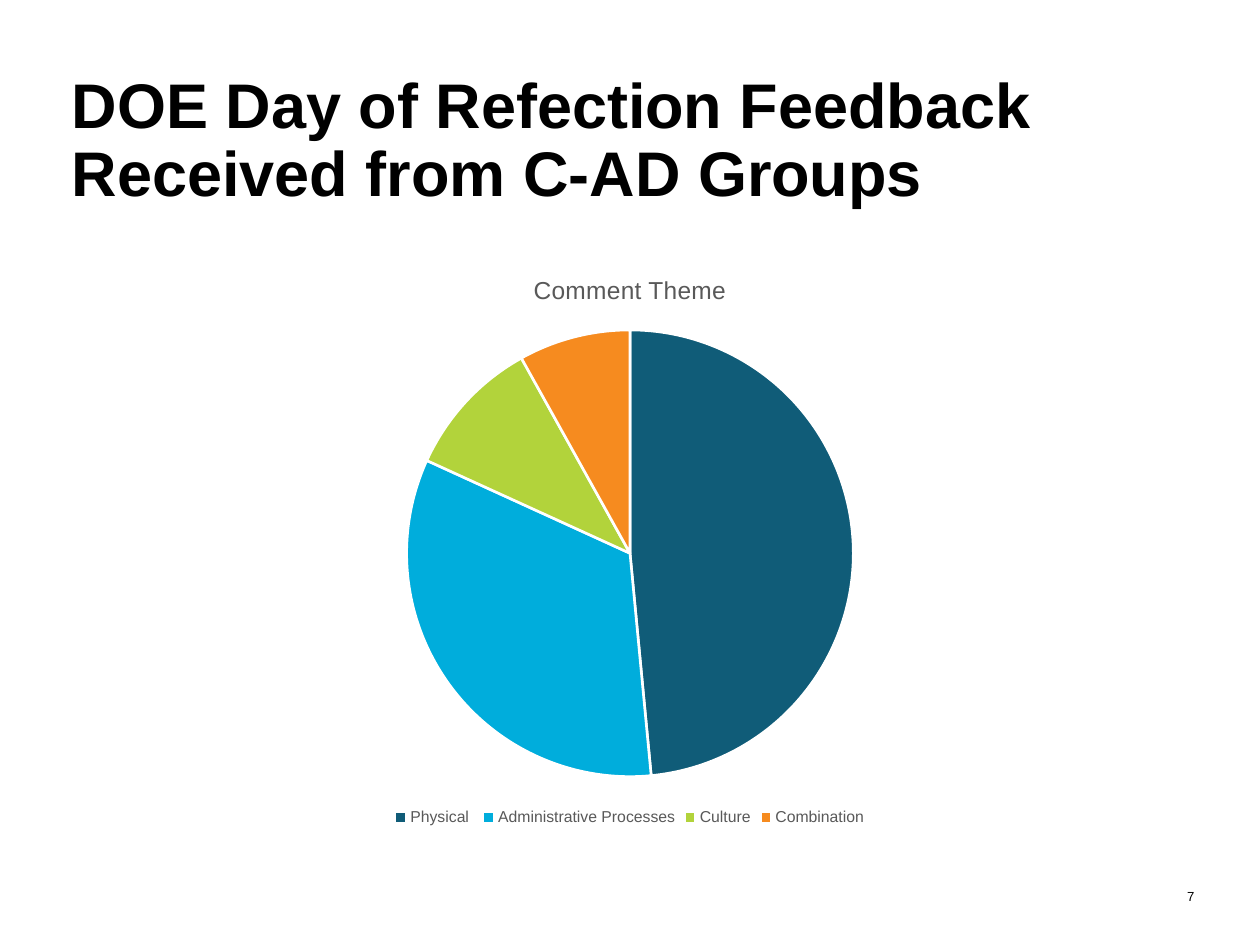
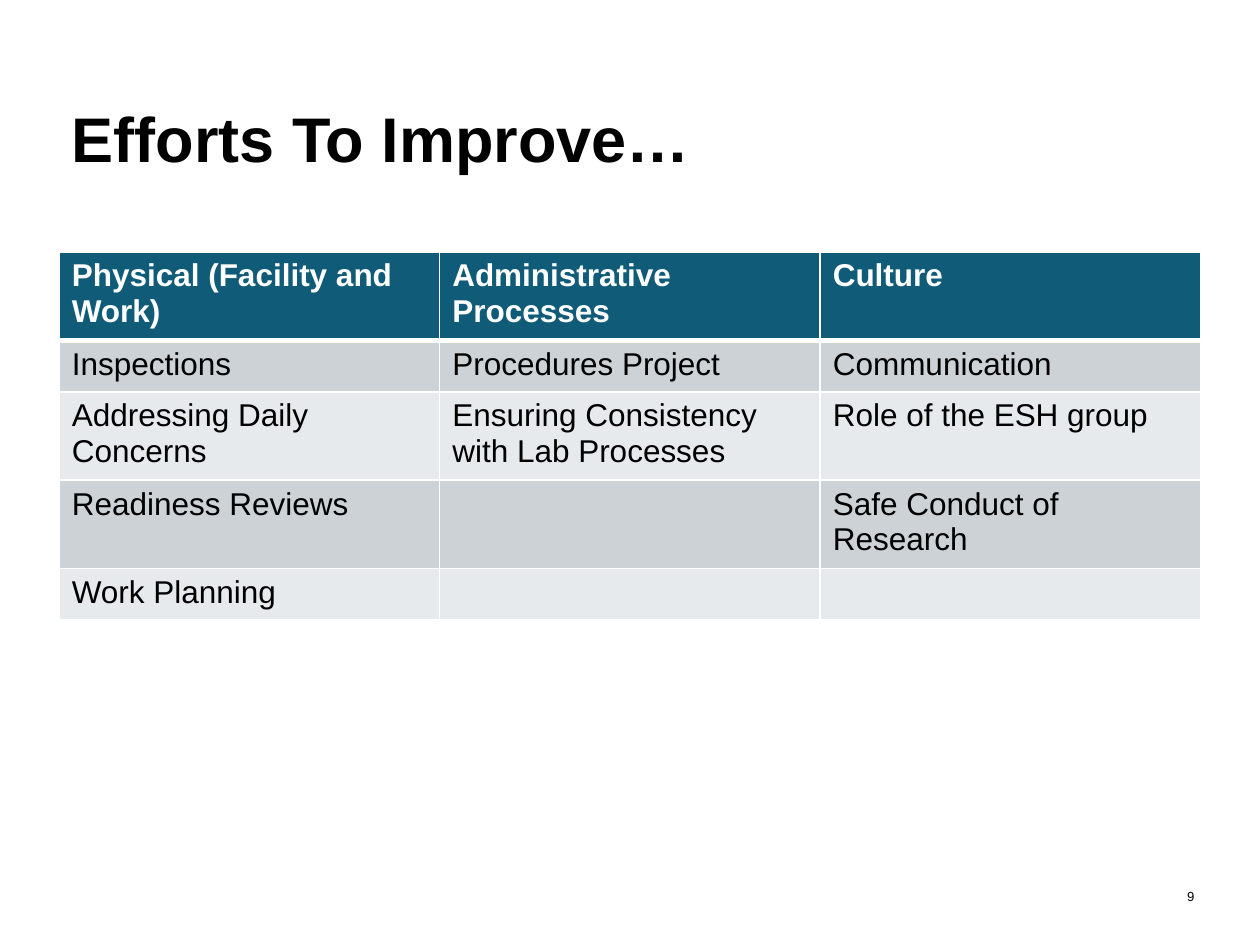
"""Build two slides: a pie of feedback themes and a table of improvement efforts."""
from dataclasses import dataclass

from lxml import etree
from pptx import Presentation
from pptx.chart.data import CategoryChartData
from pptx.dml.color import RGBColor
from pptx.enum.chart import XL_CHART_TYPE, XL_LEGEND_POSITION
from pptx.enum.text import MSO_ANCHOR, MSO_AUTO_SIZE, PP_ALIGN
from pptx.oxml.ns import qn
from pptx.util import Inches, Pt

PIE = XL_CHART_TYPE.PIE
LEGEND_BOTTOM = XL_LEGEND_POSITION.BOTTOM
MIDDLE = MSO_ANCHOR.MIDDLE
NO_FIT = MSO_AUTO_SIZE.NONE
LEFT, RIGHT = PP_ALIGN.LEFT, PP_ALIGN.RIGHT
TITLE_ONLY = 5


@dataclass(frozen=True)
class Theme:
    """Colours, font and type sizes of the deck."""
    font: str = "Arial"
    ink: str = "000000"
    paper: str = "FFFFFF"
    muted: str = "595959"
    header: str = "105C78"
    bands: tuple[str, str] = ("CCD2D6", "E7EAEC")
    title: float = 36
    table: float = 18
    chart_title: float = 14
    legend: float = 9
    number: float = 7.5


@dataclass(frozen=True)
class Area:
    """A rectangle in inches."""
    left: float
    top: float
    width: float
    height: float

    def lengths(self) -> tuple[int, ...]:
        """Return the rectangle as lengths."""
        return tuple(Inches(side) for side in (self.left, self.top, self.width, self.height))


@dataclass(frozen=True)
class Slice:
    """One wedge of the pie."""
    label: str
    value: float
    color: str


THEME = Theme()
TITLE_AREA = Area(0.47, 0.4, 9.06, 1.45)
CHART_AREA = Area(0.47, 2, 9.06, 4.6)
NUMBER_AREA = Area(9.18, 6.91, 0.35, 0.4)
ROW_HEIGHT = 0.41

THEMES = (
    Slice("Physical ", 48, "105C78"),
    Slice("Administrative Processes", 33, "00ADDC"),
    Slice("Culture", 10, "B2D33B"),
    Slice("Combination", 8, "F68B1F"),
)
EFFORTS = (
    ("Physical (Facility and Work)", "Administrative Processes", "Culture"),
    ("Inspections", "Procedures Project", "Communication"),
    ("Addressing Daily Concerns", "Ensuring Consistency with Lab Processes", "Role of the ESH group"),
    ("Readiness Reviews", "", "Safe Conduct of Research"),
    ("Work Planning", "", ""),
)


def style_font(font, size: float, color: str, bold: bool = False) -> None:
    """Apply the deck font with a size, colour and weight."""
    font.name, font.size, font.bold = THEME.font, Pt(size), bold
    font.color.rgb = RGBColor.from_string(color)


def write_text(frame, text: str, *, size: float, color: str = THEME.ink, bold: bool = False,
               align=LEFT, line_spacing: float | None = None) -> None:
    """Write one formatted paragraph into a text frame."""
    para = frame.paragraphs[0]
    para.alignment = align
    if line_spacing:
        para.line_spacing = line_spacing
    if text:
        span = para.add_run()
        span.text = text
        style_font(span.font, size, color, bold)
    else:
        style_font(para.font, size, color, bold)


def add_page(deck, title: str, number: int):
    """Add a titled and numbered page."""
    page = deck.slides.add_slide(deck.slide_layouts[TITLE_ONLY])
    heading = page.shapes.title
    heading.left, heading.top, heading.width, heading.height = TITLE_AREA.lengths()
    frame = heading.text_frame
    frame.vertical_anchor, frame.auto_size, frame.word_wrap = MIDDLE, NO_FIT, True
    write_text(frame, title, size=THEME.title, bold=True, line_spacing=0.9)

    frame = page.shapes.add_textbox(*NUMBER_AREA.lengths()).text_frame
    frame.word_wrap, frame.vertical_anchor = True, MIDDLE
    frame.margin_left = frame.margin_top = frame.margin_bottom = 0
    frame.margin_right = Inches(0.05)
    write_text(frame, str(number), size=THEME.number, align=RIGHT)
    return page


def add_pie(page, title: str, slices: tuple[Slice, ...]) -> None:
    """Draw the pie chart with its title and legend."""
    data = CategoryChartData()
    data.categories = [part.label for part in slices]
    data.add_series("Series 1", [part.value for part in slices])
    chart = page.shapes.add_chart(PIE, *CHART_AREA.lengths(), data).chart
    style_font(chart.font, 10, THEME.ink)
    chart.has_title = True
    write_text(chart.chart_title.text_frame, title, size=THEME.chart_title,
               color=THEME.muted, align=None)
    chart.chart_title.include_in_layout = False
    chart.has_legend = True
    chart.legend.position = LEGEND_BOTTOM
    chart.legend.include_in_layout = False
    style_font(chart.legend.font, THEME.legend, THEME.muted)
    plot = chart.plots[0]
    plot.vary_by_categories = True
    for index, part in enumerate(slices):
        look = plot.series[0].points[index].format
        look.fill.solid()
        look.fill.fore_color.rgb = RGBColor.from_string(part.color)
        look.line.color.rgb = RGBColor.from_string(THEME.paper)
        look.line.width = Pt(1.5)


def set_borders(cell, **widths: float) -> None:
    """Put paper-coloured borders, given as side=points, around a cell."""
    properties = cell._tc.get_or_add_tcPr()
    for index, (side, width) in enumerate(widths.items()):
        line = etree.Element(qn(f"a:ln{side}"), w=str(Pt(width)))
        fill = etree.SubElement(line, qn("a:solidFill"))
        etree.SubElement(fill, qn("a:srgbClr"), val=THEME.paper)
        properties.insert(index, line)


def add_grid(page, rows: tuple[tuple[str, ...], ...]) -> None:
    """Draw the table with a header row and banded body rows."""
    area = Area(0.47, 2, 9.06, ROW_HEIGHT * len(rows))
    table = page.shapes.add_table(len(rows), len(rows[0]), *area.lengths()).table
    for row_index, row in enumerate(rows):
        is_header = row_index == 0
        color = THEME.header if is_header else THEME.bands[(row_index - 1) % 2]
        for column_index, text in enumerate(row):
            cell = table.cell(row_index, column_index)
            cell.fill.solid()
            cell.fill.fore_color.rgb = RGBColor.from_string(color)
            set_borders(cell, L=1, R=1, T=3 if row_index == 1 else 1, B=3 if is_header else 1)
            write_text(cell.text_frame, text, size=THEME.table, bold=is_header,
                       color=THEME.paper if is_header else THEME.ink)


def main() -> None:
    """Build and save the deck."""
    deck = Presentation()
    deck.slide_width, deck.slide_height = Inches(10), Inches(7.5)
    feedback = add_page(deck, "DOE Day of Refection Feedback Received from C-AD Groups", 7)
    add_pie(feedback, "Comment Theme", THEMES)
    efforts = add_page(deck, "Efforts To Improve…", 9)
    add_grid(efforts, EFFORTS)
    deck.save("out.pptx")


if __name__ == "__main__":
    main()
